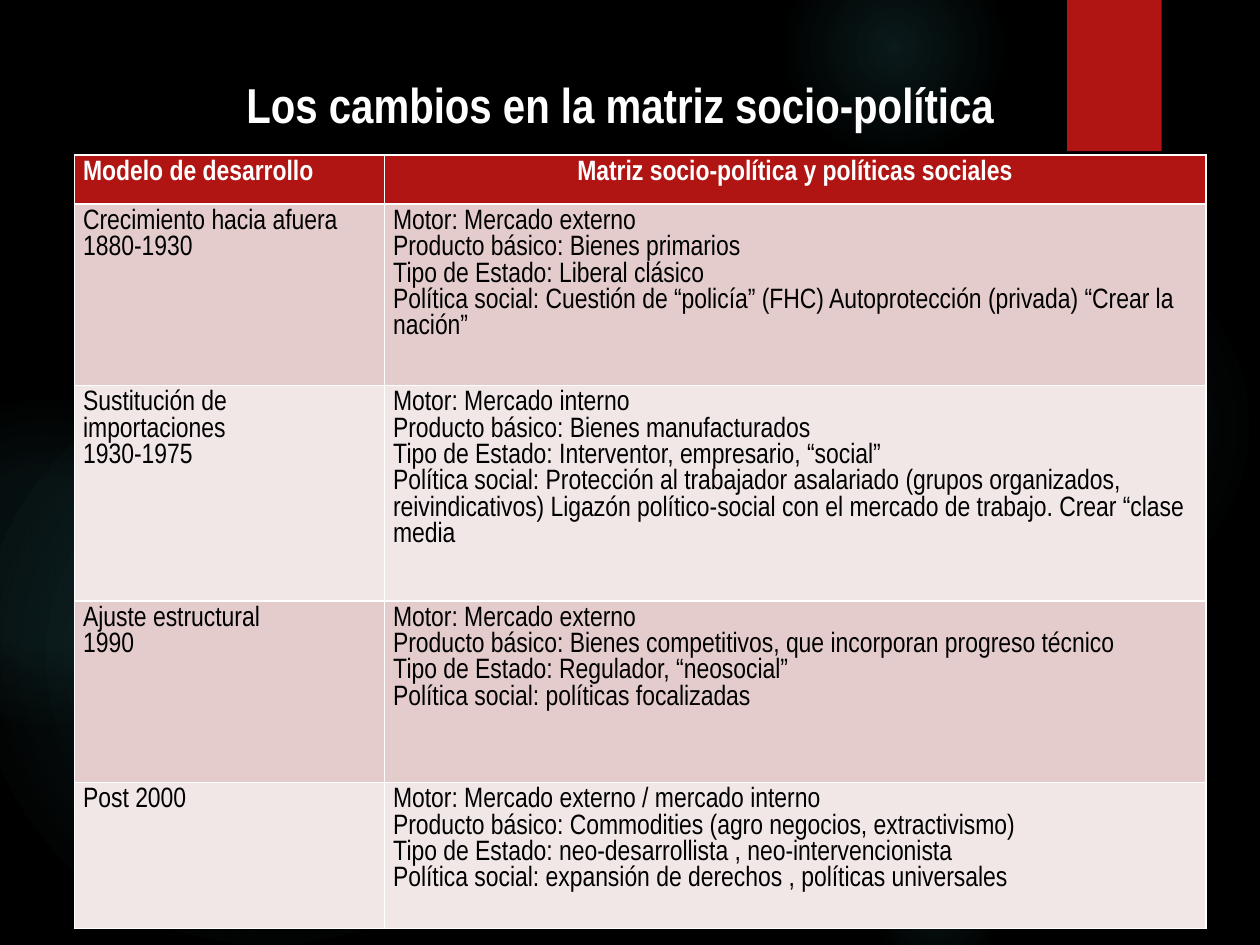
from pptx import Presentation
from pptx.util import Inches, Pt
from pptx.dml.color import RGBColor
from pptx.enum.shapes import MSO_SHAPE as Kind
from pptx.enum.text import PP_ALIGN as Align, MSO_ANCHOR as Anchor
from pptx.oxml import parse_xml
from pptx.oxml.ns import nsdecls

FONT = "Arial Narrow"
RED, WHITE, BLACK, TEAL = "B01513", "FFFFFF", "000000", "50B9C1"
BANDS = ["E4CCCC", "F2E7E7"]
TITLE = "Los cambios en la matriz socio-política"
HEAD = ["Modelo de desarrollo", "Matriz socio-política y políticas sociales"]
LABELS = ["Motor", "Producto básico", "Tipo de Estado", "Política social"]
MODELS = [
    (["Crecimiento hacia afuera", "1880-1930"],
     ["Mercado externo", "Bienes primarios", "Liberal clásico",
      "Cuestión de “policía” (FHC) Autoprotección (privada) “Crear la nación”"]),
    (["Sustitución de importaciones", "1930-1975"],
     ["Mercado interno", "Bienes manufacturados",
      "Interventor, empresario, “social”",
      "Protección al trabajador asalariado (grupos organizados, "
      "reivindicativos) Ligazón político-social con el mercado de trabajo. "
      "Crear “clase media"]),
    (["Ajuste estructural", "1990"],
     ["Mercado externo",
      "Bienes competitivos, que incorporan progreso técnico",
      "Regulador, “neosocial”", "políticas focalizadas"]),
    (["Post 2000"],
     ["Mercado externo / mercado interno",
      "Commodities (agro negocios, extractivismo)",
      "neo-desarrollista , neo-intervencionista",
      "expansión de derechos , políticas universales"]),
]
COLS = [2.46, 6.52]
ROWS = [0.39, 1.44, 1.71, 1.44, 1.16]
GLOWS = [
    (6.89, 1.83, 3.08, [(0, 7), (36, 6), (69, 0)]),
    (6.22, -0.5, 1.75, [(0, 14), (36, 7), (73, 0)]),
    (6.89, 6.67, 1.08, [(0, 9), (36, 5), (66, 0)]),
    (-0.17, 2.92, 4.58, [(0, 11), (36, 10), (75, 0)]),
    (-0.92, 3.17, 2.58, [(0, 8), (36, 8), (72, 0)]),
]


def rgb(code):
    return RGBColor.from_string(code)


def add_shape(slide, kind, *box):
    shape = slide.shapes.add_shape(kind, *map(Inches, box))
    shape.shadow.inherit = False
    shape.line.fill.background()
    return shape


def add_glow(slide, left, top, size, stops):
    shape = add_shape(slide, Kind.OVAL, left, top, size, size)
    marks = "".join(
        f'<a:gs pos="{pos * 1000}"><a:srgbClr val="{TEAL}">'
        f'<a:alpha val="{alpha * 1000}"/></a:srgbClr></a:gs>'
        for pos, alpha in stops)
    grad = parse_xml(
        f'<a:gradFill {nsdecls("a")} rotWithShape="1"><a:gsLst>{marks}</a:gsLst>'
        '<a:path path="circle"><a:fillToRect l="50000" t="50000" r="50000" '
        'b="50000"/></a:path></a:gradFill>')
    shape.fill.background()
    props = shape.element.spPr
    props.replace(props.find("{*}noFill"), grad)


def write(frame, lines, size, color, bold=False, align=Align.LEFT):
    frame.word_wrap = True
    frame.text = "\n".join(lines)
    for para in frame.paragraphs:
        para.alignment = align
        font = para.font
        font.name, font.size, font.bold = FONT, Pt(size), bold
        font.color.rgb = rgb(color)


def fill_cell(cell, fill, *text):
    cell.fill.solid()
    cell.fill.fore_color.rgb = rgb(fill)
    cell.margin_left = cell.margin_right = Inches(0.07)
    cell.margin_top = cell.margin_bottom = Inches(0.04)
    write(cell.text_frame, *text)


def add_title(slide):
    box = slide.shapes.add_textbox(*map(Inches, (0.43, 0.52, 8.98, 0.54)))
    frame = box.text_frame
    frame.vertical_anchor = Anchor.BOTTOM
    frame.margin_top = frame.margin_bottom = 0
    write(frame, [TITLE], 28, WHITE, True, Align.CENTER)


def add_grid(slide):
    area = map(Inches, (0.59, 1.23, sum(COLS), sum(ROWS)))
    table = slide.shapes.add_table(len(ROWS), len(COLS), *area).table
    for col, width in zip(table.columns, COLS):
        col.width = Inches(width)
    for row, height in zip(table.rows, ROWS):
        row.height = Inches(height)
    for col, (text, align) in enumerate(zip(HEAD, (Align.LEFT, Align.CENTER))):
        fill_cell(table.cell(0, col), RED, [text], 16, WHITE, True, align)
    for row, (name, facts) in enumerate(MODELS, 1):
        lines = [f"{label}: {fact}" for label, fact in zip(LABELS, facts)]
        for col, part in enumerate((name, lines)):
            fill_cell(table.cell(row, col), BANDS[(row - 1) % 2], part, 16, BLACK)


def main():
    """Build the slide on the changes in the socio-political matrix."""
    deck = Presentation()
    deck.slide_width, deck.slide_height = Inches(10), Inches(7.5)
    slide = deck.slides.add_slide(deck.slide_layouts[6])
    back = slide.background.fill
    back.solid()
    back.fore_color.rgb = rgb(BLACK)
    for glow in GLOWS:
        add_glow(slide, *glow)
    tab = add_shape(slide, Kind.RECTANGLE, 8.47, 0, 0.75, 1.2)
    tab.fill.solid()
    tab.fill.fore_color.rgb = rgb(RED)
    add_title(slide)
    add_grid(slide)
    deck.save("out.pptx")


if __name__ == "__main__":
    main()
